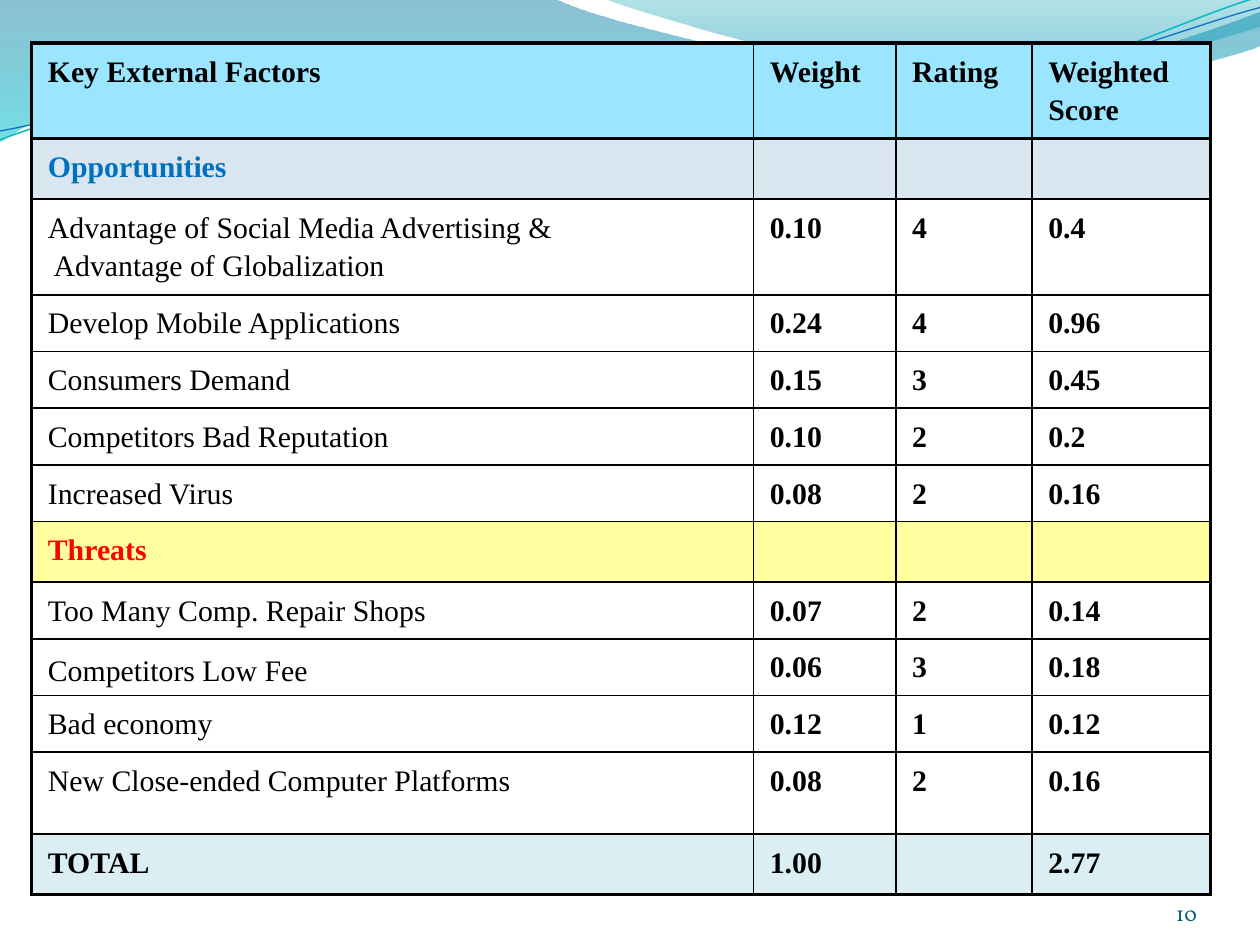
from dataclasses import dataclass

from lxml.etree import SubElement
from pptx import Presentation
from pptx.dml.color import RGBColor
from pptx.enum.text import MSO_ANCHOR as Anchor, PP_ALIGN as Align
from pptx.oxml import parse_xml
from pptx.oxml.ns import nsdecls, qn
from pptx.util import Inches, Pt


@dataclass(frozen=True)
class Theme:
    ink: str = "000000"
    header: str = "9BE5FF"
    opportunity: str = "D9E5EF"
    opportunity_text: str = "0070C0"
    threat: str = "FFFF9F"
    threat_text: str = "FF0000"
    total: str = "DAEEF3"
    number: str = "045D75"
    table_font: str = "Times New Roman"
    number_font: str = "Vollkorn"
    table_size: float = 17
    number_size: float = 12
    thin: float = 1
    thick: float = 2.25


THEME = Theme()

# Waves: a start point, then cubic segments (6 numbers) or straight ones (2)
BANDS = [
    # gradient stops: position, colour, opacity in percent
    ([(0, "0074A1", 45), (1, "00C6CF", 55)],
     [(0, 0), (4.4, -0.01), (4.76, 0.17, 6.64, 0.63, 7.58, 0.63),
      (8.53, 0.63, 9.58, 0.26, 10, 0.09), (10.01, 0.36),
      (9.83, 0.44, 8.7, 0.76, 7.46, 0.75), (6.22, 0.75, 3.82, 0.28, 2.57, 0.34),
      (1.29, 0.36, 0.46, 0.83, -0.01, 1.13)]),
    ([(0, "00A1A9", 30), (0.8, "008BBF", 45)],
     [(4.79, -0.01), (5.09, 0.11, 6.82, 0.62, 7.69, 0.65),
      (8.56, 0.69, 9.61, 0.32, 10, 0.21), (10, 0)]),
]
STRANDS = [
    ("0AB8BF", 0.85,
     [(0, 1.11), (0.48, 0.93, 1.58, 0.57, 2.77, 0.52),
      (3.95, 0.47, 5.93, 0.89, 7.13, 0.8), (8.33, 0.71, 9.38, 0.15, 9.98, -0.02)]),
    ("0F6FC6", 0.75,
     [(0, 1.04), (0.47, 0.96, 1.64, 0.61, 2.83, 0.56),
      (4.03, 0.51, 5.97, 0.84, 7.17, 0.75), (8.36, 0.67, 9.41, 0.21, 10, 0.06)]),
]

COLUMNS = [5.73, 1.13, 1.08, 1.42]
ROW_HEIGHTS = {"header": 0.76, "section": 0.48, "factor": 0.45}
TALL_ROWS = {2: 0.76, 11: 0.65}
LOW_ROW = 9  # its factor sits at the bottom of the cell

# Row kind, row fill, colour of the first column, texts
ROWS = [
    ("header", THEME.header, THEME.ink, ["Key External Factors", "Weight", "Rating", "Weighted Score"]),
    ("section", THEME.opportunity, THEME.opportunity_text, ["Opportunities", "", "", ""]),
    *[("factor", None, THEME.ink, texts) for texts in [
        ["Advantage of Social Media Advertising &\n Advantage of Globalization", "0.10", "4", "0.4"],
        ["Develop Mobile Applications", "0.24", "4", "0.96"],
        ["Consumers Demand", "0.15", "3", "0.45"],
        ["Competitors Bad Reputation", "0.10", "2", "0.2"],
        ["Increased Virus", "0.08", "2", "0.16"]]],
    ("section", THEME.threat, THEME.threat_text, ["Threats", "", "", ""]),
    *[("factor", None, THEME.ink, texts) for texts in [
        ["Too Many Comp. Repair Shops", "0.07", "2", "0.14"],
        ["Competitors Low Fee", "0.06", "3", "0.18"],
        ["Bad economy", "0.12", "1", "0.12"],
        ["New Close-ended Computer Platforms", "0.08", "2", "0.16"]]],
    ("section", THEME.total, THEME.ink, ["TOTAL", "1.00", "", "2.77"]),
]


def apply(target, values):
    for name, value in values.items():
        setattr(target, name, value)


def rgb(value):
    return RGBColor.from_string(value)


def format_span(span, font, size, color, bold=False):
    apply(span.font, {"name": font, "size": Pt(size), "bold": bold})
    span.font.color.rgb = rgb(color)


def add_wave(page, segments, close):
    """Draw the control points as a polygon, then join each three into a curve."""
    points = [(Inches(segment[i]), Inches(segment[i + 1]))
              for segment in segments for i in range(0, len(segment), 2)]
    builder = page.shapes.build_freeform(*points[0])
    builder.add_line_segments(points[1:], close=close)
    wave = builder.convert_to_shape()
    wave.shadow.inherit = False
    lines = iter(list(wave._element.iter(qn("a:lnTo"))))
    for segment in segments[1:]:
        first = next(lines)
        if len(segment) == 6:
            first.tag = qn("a:cubicBezTo")
            for _ in range(2):
                line = next(lines)
                first.append(line[0])
                line.getparent().remove(line)
    return wave


def add_band(page, stops, segments):
    band = add_wave(page, segments, close=True)
    band.line.fill.background()
    band.fill.gradient()
    band.fill.gradient_angle = 270  # first colour on top
    for stop, (position, color, _) in zip(band.fill.gradient_stops, stops):
        stop.position = position
        stop.color.rgb = rgb(color)
    tones = band._element.spPr.find(qn("a:gradFill")).iter(qn("a:srgbClr"))
    for tone, (_, _, opacity) in zip(tones, stops):
        SubElement(tone, qn("a:alpha")).set("val", str(opacity * 1000))


def add_strand(page, color, width, segments):
    strand = add_wave(page, segments, close=False)
    strand.fill.background()
    strand.line.color.rgb = rgb(color)
    strand.line.width = Pt(width)


def set_borders(cell, widths):
    properties = cell._tc.get_or_add_tcPr()
    for index, (side, width) in enumerate(widths.items()):
        properties.insert(index, parse_xml(
            f'<a:ln{side} {nsdecls("a")} w="{Pt(width)}"><a:solidFill>'
            f'<a:srgbClr val="{THEME.ink}"/></a:solidFill></a:ln{side}>'))


def fill_cell(cell, text, fill, color, bold, low):
    apply(cell, {"margin_left": Inches(0.13), "margin_right": Inches(0.13),
                 "margin_top": Inches(0.06), "margin_bottom": Inches(0.06),
                 "vertical_anchor": Anchor.BOTTOM if low else Anchor.TOP})
    if fill:
        cell.fill.solid()
        cell.fill.fore_color.rgb = rgb(fill)
    else:
        cell.fill.background()
    para = cell.text_frame.paragraphs[0]
    para.text = text
    apply(para, {"line_spacing": 1.15, "space_after": Pt(0 if low or "\n" in text else 10)})
    for span in para.runs:
        format_span(span, THEME.table_font, THEME.table_size, color, bold)


def add_factor_table(page):
    frame = page.shapes.add_table(len(ROWS), len(COLUMNS), Inches(0.25), Inches(0.34),
                                  Inches(9.36), Inches(6.83))
    table = frame.table
    apply(table, {"first_row": False, "horz_banding": False})
    for column, width in zip(table.columns, COLUMNS):
        column.width = Inches(width)
    last_row, last_column = len(ROWS) - 1, len(COLUMNS) - 1
    for r, (kind, fill, label_color, texts) in enumerate(ROWS):
        table.rows[r].height = Inches(TALL_ROWS.get(r, ROW_HEIGHTS[kind]))
        for c, text in enumerate(texts):
            cell = table.cell(r, c)
            label = c == 0
            fill_cell(cell, text, fill, label_color if label else THEME.ink,
                      bold=not label or kind != "factor", low=label and r == LOW_ROW)
            # Thick lines round the table and under the header
            thick = {"L": label, "R": c == last_column, "T": r <= 1, "B": r in (0, last_row)}
            set_borders(cell, {side: THEME.thick if on else THEME.thin
                               for side, on in thick.items()})


def add_page_number(page, text):
    box = page.shapes.add_textbox(Inches(8.67), Inches(6.95), Inches(0.83), Inches(0.4))
    apply(box.text_frame, {"word_wrap": True, "vertical_anchor": Anchor.BOTTOM,
                           "margin_left": 0, "margin_right": 0,
                           "margin_top": 0, "margin_bottom": 0})
    para = box.text_frame.paragraphs[0]
    para.alignment = Align.RIGHT
    span = para.add_run()
    span.text = text
    format_span(span, THEME.number_font, THEME.number_size, THEME.number)


def main():
    deck = Presentation()
    apply(deck, {"slide_width": Inches(10), "slide_height": Inches(7.5)})
    page = deck.slides.add_slide(deck.slide_layouts[6])
    # Waves behind the table
    for band in BANDS:
        add_band(page, *band)
    for strand in STRANDS:
        add_strand(page, *strand)
    # Content
    add_factor_table(page)
    add_page_number(page, "10")
    deck.save("out.pptx")


if __name__ == "__main__":
    main()
